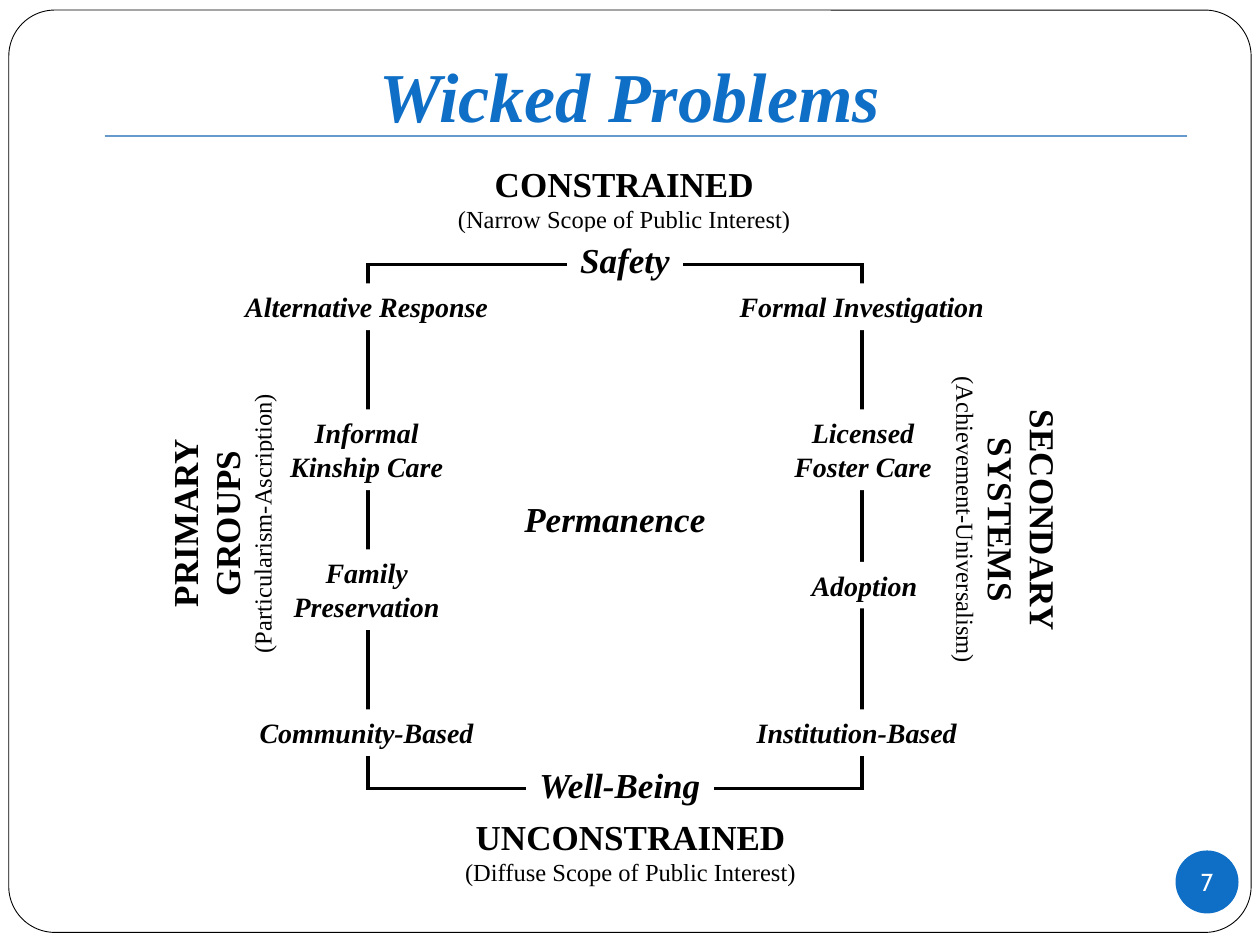
import pptx
import pptx.dml.color
import pptx.enum.shapes
import pptx.enum.text
import pptx.oxml
import pptx.oxml.ns
import pptx.util
from lxml import etree

Inches = pptx.util.Inches
Pt = pptx.util.Pt
RGBColor = pptx.dml.color.RGBColor
Shape = pptx.enum.shapes.MSO_SHAPE
qn = pptx.oxml.ns.qn

BLACK = RGBColor(0x00, 0x00, 0x00)
WHITE = RGBColor(0xFF, 0xFF, 0xFF)
BLUE = RGBColor(0x0F, 0x6F, 0xC6)
RULE_BLUE = RGBColor(0x66, 0x99, 0xCC)


class SlideBuilder:
    font = "Times New Roman"
    heading_size = 20
    detail_size = 14
    label_size = 16

    def __init__(self, slide):
        self.slide = slide

    def set_lines(self, shape, lines, color=BLACK, font=None, wrap=True):
        frame = shape.text_frame
        frame.word_wrap = wrap
        for index, (text, size, bold, italic) in enumerate(lines):
            paragraph = frame.add_paragraph() if index else frame.paragraphs[0]
            paragraph.text = text
            paragraph.alignment = pptx.enum.text.PP_ALIGN.CENTER
            paragraph.font.name = font or self.font
            paragraph.font.size = Pt(size)
            paragraph.font.bold = bold
            paragraph.font.italic = italic
            paragraph.font.color.rgb = color
        return frame

    def shape(self, kind, left, top, width, height, fill=WHITE, outline=None):
        shape = self.slide.shapes.add_shape(
            kind, Inches(left), Inches(top), Inches(width), Inches(height))
        shape.shadow.inherit = False
        shape.fill.solid()
        shape.fill.fore_color.rgb = fill
        if outline is None:
            shape.line.fill.background()
        else:
            shape.line.color.rgb = outline
            shape.line.width = Pt(0.5)
        return shape

    def text(self, left, top, width, height, lines, color=BLACK):
        box = self.slide.shapes.add_textbox(
            Inches(left), Inches(top), Inches(width), Inches(height))
        return self.set_lines(box, lines, color)

    def label(self, text, center, top, width, height=0.37, size=None, wrap=False):
        patch = self.shape(Shape.RECTANGLE, center - width / 2, top, width, height)
        frame = self.set_lines(patch, [(text, size or self.label_size, True, True)], wrap=wrap)
        frame.vertical_anchor = pptx.enum.text.MSO_ANCHOR.TOP

    def theme(self, text, center, top, width):
        self.label(text, center, top, width, 0.44, self.heading_size)

    def pole_lines(self, heading, detail):
        return [(heading, self.heading_size, True, False),
                (detail, self.detail_size, False, False)]

    def side_pole(self, heading, detail, left, top, width, rotation):
        pole = self.shape(Shape.RECTANGLE, left, top, width, 1.01)
        pole.rotation = rotation
        frame = self.set_lines(pole, self.pole_lines(heading, detail))
        frame.vertical_anchor = pptx.enum.text.MSO_ANCHOR.TOP

    def rule(self, left, right, y):
        line = self.slide.shapes.add_connector(
            pptx.enum.shapes.MSO_CONNECTOR.STRAIGHT,
            Inches(left), Inches(y), Inches(right), Inches(y))
        line.line.color.rgb = RULE_BLUE
        line.line.width = Pt(0.75)
        etree.SubElement(line._element.spPr, qn("a:effectLst"))

    def border(self, cell, side, visible):
        edge = etree.SubElement(cell._tc.get_or_add_tcPr(), qn("a:ln" + side))
        if visible:
            edge.set("w", str(Pt(2.25)))
            fill = etree.SubElement(edge, qn("a:solidFill"))
            etree.SubElement(fill, qn("a:srgbClr"), val=str(BLACK))
        else:
            edge.set("w", "0")
            etree.SubElement(edge, qn("a:noFill"))

    def quadrants(self, left, top, width, row_heights):
        table = self.slide.shapes.add_table(
            2, 2, Inches(left), Inches(top), Inches(width), Inches(sum(row_heights))).table
        table.first_row = False
        table.horz_banding = False
        for row, height in enumerate(row_heights):
            table.rows[row].height = Inches(height)
            for column in range(2):
                cell = table.cell(row, column)
                outer = {"L": column == 0, "R": column == 1, "T": row == 0, "B": row == 1}
                for side, visible in outer.items():
                    self.border(cell, side, visible)
                cell.fill.background()


def main():
    deck = pptx.Presentation()
    deck.slide_width = Inches(10)
    deck.slide_height = Inches(7.5)
    page = SlideBuilder(deck.slides.add_slide(deck.slide_layouts[6]))

    page_frame = page.shape(Shape.ROUNDED_RECTANGLE, 0.07, 0.08, 9.86, 7.32, outline=BLACK)
    page_frame.adjustments[0] = 0.05

    page.theme("Permanence", 4.88, 3.9, 1.65)
    page.side_pole("PRIMARY GROUPS", "(Particularism-Ascription)", 0.49, 3.65, 2.52, 270)
    page.quadrants(2.92, 2.1, 3.92, [1.68, 2.48])

    title = page.text(0, 0.31, 10, 0.77, [("Wicked Problems", 40, True, True)], BLUE)
    title.margin_top = Inches(0.11)
    title.margin_bottom = Inches(0.02)
    page.rule(0.83, 9.42, 1.08)

    page.text(2.96, 1.24, 3.99, 0.67,
              page.pole_lines("CONSTRAINED", "(Narrow Scope of Public Interest)"))
    page.text(2.82, 6.42, 4.37, 0.67,
              page.pole_lines("UNCONSTRAINED", "(Diffuse Scope of Public Interest)"))
    page.theme("Well-Being", 4.92, 6.01, 1.49)
    page.theme("Safety", 4.96, 1.84, 0.92)

    for text, center, top, width in [
        ("Alternative Response", 2.91, 2.25, 2.16),
        ("Formal Investigation", 6.84, 2.25, 2.17),
        ("Adoption", 6.86, 4.46, 1.05),
        ("Community-Based", 2.91, 5.63, 1.93),
        ("Institution-Based", 6.8, 5.63, 1.81),
    ]:
        page.label(text, center, top, width)

    for text, center, top, width in [
        ("Informal Kinship Care", 2.91, 3.25, 1.47),
        ("Family Preservation", 2.91, 4.36, 1.47),
        ("Licensed Foster Care", 6.85, 3.25, 1.54),
    ]:
        page.label(text, center, top, width, 0.64, wrap=True)

    page.side_pole("SECONDARY SYSTEMS", "(Achievement-Universalism)", 6.62, 3.62, 2.75, 90)

    badge = page.shape(Shape.OVAL, 9.33, 6.75, 0.5, 0.5, BLUE)
    number = page.set_lines(badge, [("7", 14, False, False)], WHITE, "Cabin", wrap=False)
    number.vertical_anchor = pptx.enum.text.MSO_ANCHOR.MIDDLE
    number.margin_left = number.margin_right = 0
    number.margin_top = number.margin_bottom = 0

    deck.save("out.pptx")


if __name__ == "__main__":
    main()
